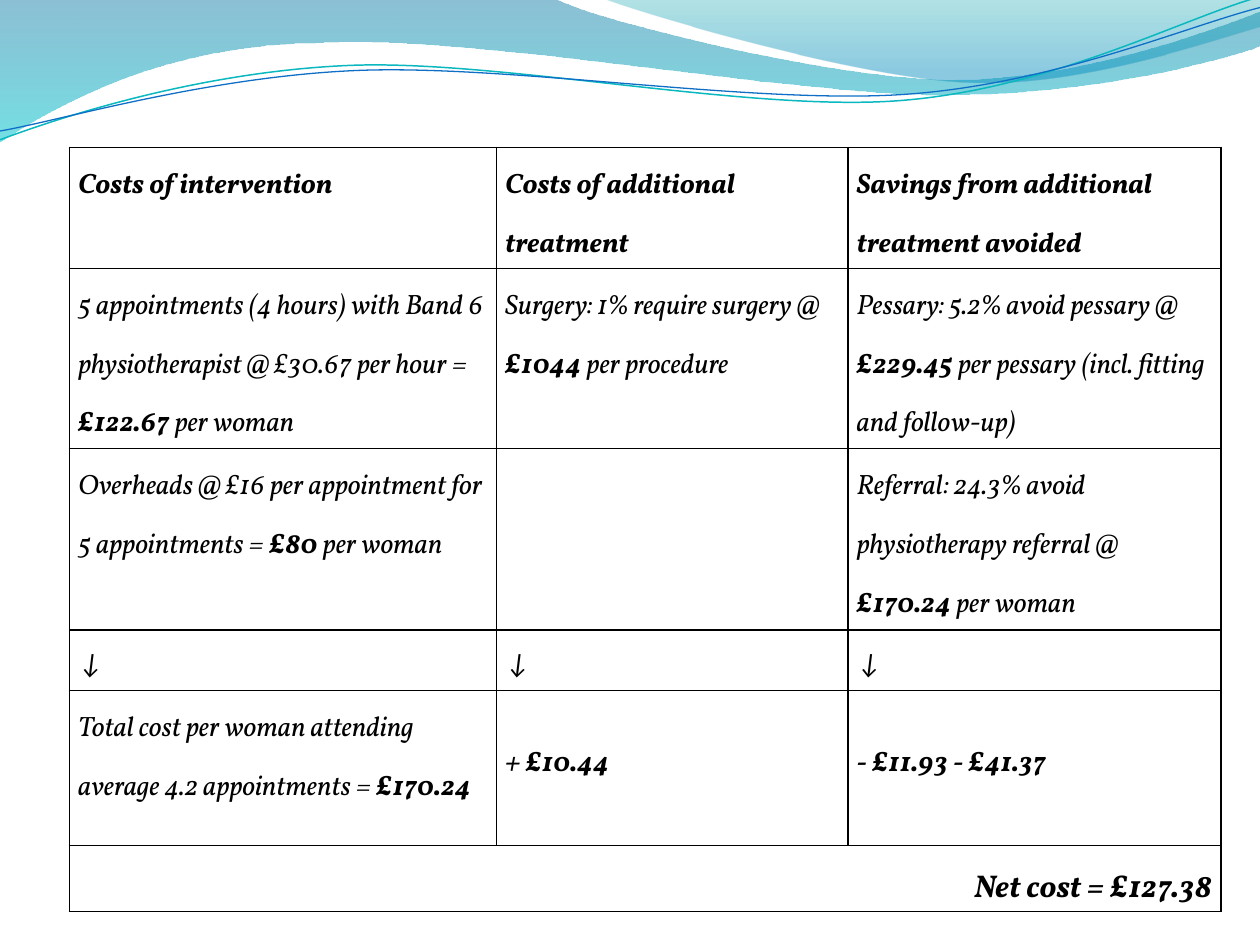
"""Build a cost table slide beneath a decorative wave header."""
from dataclasses import dataclass
from typing import Optional

from lxml import etree
from pptx import Presentation
from pptx.dml.color import RGBColor
from pptx.enum.text import PP_ALIGN
from pptx.oxml.ns import qn
from pptx.util import Inches, Pt

RIGHT = PP_ALIGN.RIGHT
BLACK = RGBColor(0x00, 0x00, 0x00)
DEEP_BLUE = RGBColor(0x00, 0x74, 0xA1)
AQUA = RGBColor(0x00, 0xC6, 0xCF)
TEAL = RGBColor(0x00, 0xA1, 0xA9)
SKY = RGBColor(0x00, 0x8B, 0xBF)
LINE_TEAL = RGBColor(0x0A, 0xB8, 0xBF)
LINE_BLUE = RGBColor(0x0F, 0x6F, 0xC6)

FONT = "Vollkorn"
ARROW_FONT = "Calibri"

Point = tuple[float, float]


@dataclass
class Stop:
    position: float
    color: RGBColor
    opacity: int


@dataclass
class Wave:
    start: Point
    segments: list[tuple[Point, ...]]
    stops: Optional[tuple[Stop, Stop]] = None
    line_color: Optional[RGBColor] = None
    line_width: float = 0


WAVES = [
    Wave((0, -0.01), [
        ((4.4, -0.01),),
        ((4.76, 0.17), (6.64, 0.63), (7.58, 0.63)),
        ((8.53, 0.63), (9.58, 0.26), (10, 0.09)),
        ((10.01, 0.36),),
        ((9.83, 0.44), (8.7, 0.76), (7.46, 0.75)),
        ((6.22, 0.75), (3.82, 0.28), (2.57, 0.34)),
        ((1.29, 0.35), (0.46, 0.83), (-0.01, 1.13)),
        ((0, -0.01),),
    ], stops=(Stop(0, DEEP_BLUE, 45), Stop(1, AQUA, 55))),
    Wave((4.79, -0.01), [
        ((5.09, 0.11), (6.82, 0.62), (7.69, 0.65)),
        ((8.56, 0.69), (9.61, 0.32), (10, 0.21)),
        ((10, 0),),
        ((4.79, -0.01),),
    ], stops=(Stop(0, TEAL, 30), Stop(0.8, SKY, 45))),
    Wave((0, 1.11), [
        ((0.48, 0.93), (1.58, 0.57), (2.77, 0.52)),
        ((3.95, 0.47), (5.93, 0.89), (7.13, 0.8)),
        ((8.33, 0.71), (9.38, 0.15), (9.98, -0.02)),
    ], line_color=LINE_TEAL, line_width=0.85),
    Wave((0, 1.04), [
        ((0.47, 0.96), (1.64, 0.61), (2.83, 0.56)),
        ((4.03, 0.51), (5.97, 0.83), (7.17, 0.75)),
        ((8.36, 0.67), (9.41, 0.21), (10, 0.06)),
    ], line_color=LINE_BLUE, line_width=0.75),
]

COL_WIDTHS = [3.39, 2.79, 2.96]
ROW_HEIGHTS = [0.96, 1.43, 1.44, 0.48, 1.23, 0.52]
ARROW_ROW, TOTAL_ROW, NET_ROW = 3, 4, 5
ROWS = [
    ["**Costs of intervention**", "**Costs of additional treatment**",
     "**Savings from additional treatment avoided**"],
    ["5 appointments (4 hours) with Band 6 physiotherapist @ £30.67 per hour = "
     "**£122.67** per woman",
     "Surgery: 1% require surgery @ **£1044** per procedure",
     "Pessary: 5.2% avoid pessary @ **£229.45** per pessary "
     "(incl. fitting and follow-up)"],
    ["Overheads @ £16 per appointment for 5 appointments = **£80** per woman", "",
     "Referral: 24.3% avoid physiotherapy referral @ **£170.24** per woman"],
    ["↓"] * 3,
    ["Total cost per woman attending average 4.2 appointments = **£170.24**",
     "**+ £10.44**", "**- £11.93 - £41.37**"],
    ["**Net cost = £127.38**", "", ""],
]


def bend(sp, segments: list[tuple[Point, ...]]) -> None:
    """Turn each run of three straight steps into one Bézier curve."""
    steps = iter(list(sp.element.spPr.iter(qn("a:lnTo"))))
    for seg in segments:
        first, *others = [next(steps) for _ in seg]
        if others:
            curve = etree.Element(qn("a:cubicBezTo"))
            first.addprevious(curve)
            for step in (first, *others):
                curve.append(step[0])
                step.getparent().remove(step)


def draw_wave(slide, wave: Wave) -> None:
    """Draw a gradient band or an open curved line."""
    start, *rest = [(Inches(x), Inches(y)) for seg in [(wave.start,), *wave.segments]
                    for x, y in seg]
    builder = slide.shapes.build_freeform(*start)
    builder.add_line_segments(rest, close=wave.stops is not None)
    sp = builder.convert_to_shape()
    bend(sp, wave.segments)
    sp.shadow.inherit = False
    if wave.stops is None:
        sp.fill.background()
        sp.line.color.rgb = wave.line_color
        sp.line.width = Pt(wave.line_width)
        return
    sp.line.fill.background()
    sp.fill.gradient()
    sp.fill.gradient_angle = 270
    for target, stop in zip(sp.fill.gradient_stops, wave.stops):
        target.position = stop.position
        target.color.rgb = stop.color
    for clr, stop in zip(sp.element.spPr.iter(qn("a:srgbClr")), wave.stops):
        etree.SubElement(clr, qn("a:alpha"), val=str(stop.opacity * 1000))


def add_borders(cell) -> None:
    """Give a cell a thin black line on every side."""
    tc_pr = cell._tc.get_or_add_tcPr()
    for i, side in enumerate("LRTB"):
        ln = etree.Element(qn(f"a:ln{side}"), w=str(Pt(1)))
        fill = etree.SubElement(ln, qn("a:solidFill"))
        etree.SubElement(fill, qn("a:srgbClr"), val=str(BLACK))
        tc_pr.insert(i, ln)


def write_cell(cell, text: str, font: str, size: int) -> None:
    """Fill a cell with text in which ** switches bold on and off."""
    cell.fill.background()
    cell.margin_left = cell.margin_right = Inches(0.07)
    cell.margin_top = cell.margin_bottom = 0
    add_borders(cell)
    p = cell.text_frame.paragraphs[0]
    p.line_spacing = 1.5
    p.font.name = font
    p.font.size = Pt(size)
    p.font.italic = True
    p.font.color.rgb = BLACK
    for i, part in enumerate(text.split("**")):
        if part:
            r = p.add_run()
            r.text = part
            r.font.bold = i % 2 == 1


def draw_table(slide) -> None:
    """Draw the cost table with its merged net cost row."""
    table = slide.shapes.add_table(
        len(ROWS), len(COL_WIDTHS), Inches(0.55), Inches(1.17),
        Inches(sum(COL_WIDTHS)), Inches(sum(ROW_HEIGHTS))).table
    table.first_row = table.horz_banding = False
    for col, width in zip(table.columns, COL_WIDTHS):
        col.width = Inches(width)
    for i, (height, texts) in enumerate(zip(ROW_HEIGHTS, ROWS)):
        table.rows[i].height = Inches(height)
        for j, text in enumerate(texts):
            write_cell(table.cell(i, j), text,
                       ARROW_FONT if i == ARROW_ROW else FONT,
                       18 if i == NET_ROW else 16)
    for j in (1, 2):
        table.cell(TOTAL_ROW, j).margin_top = Inches(0.28)
    net = table.cell(NET_ROW, 0)
    net.merge(table.cell(NET_ROW, 2))
    net.text_frame.paragraphs[0].alignment = RIGHT


def main() -> None:
    """Create and save the slide."""
    prs = Presentation()
    prs.slide_width, prs.slide_height = Inches(10), Inches(7.5)
    slide = prs.slides.add_slide(prs.slide_layouts[6])
    for wave in WAVES:
        draw_wave(slide, wave)
    draw_table(slide)
    prs.save("out.pptx")


if __name__ == "__main__":
    main()
